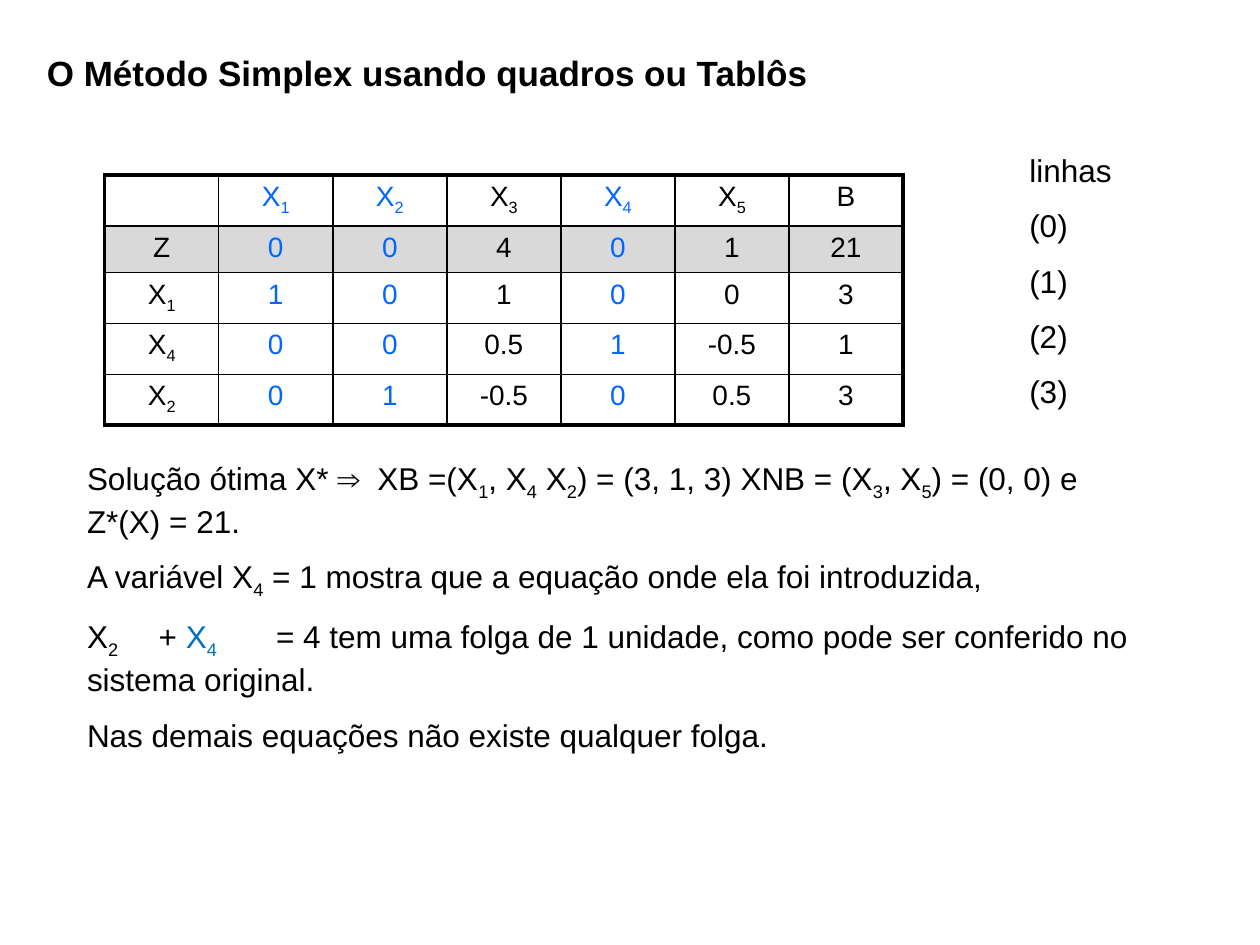
import pptx
import pptx.dml.color
import pptx.enum.text
import pptx.oxml.ns
import pptx.util
from lxml import etree
from typing import NamedTuple

Cm = pptx.util.Cm
Pt = pptx.util.Pt
FONT = "Arial"
BLACK, BLUE, BASIC_BLUE, GREY = "000000", "0070C0", "0066FF", "D9D9D9"
THIN, THICK = 1, 2.25
LEFT = pptx.enum.text.PP_ALIGN.LEFT
CENTER = pptx.enum.text.PP_ALIGN.CENTER


class Span(NamedTuple):
    text: str
    color: str = BLACK
    subscript: bool = False


class Area(NamedTuple):
    """Left, top, width and height in centimetres."""
    left: float
    top: float
    width: float
    height: float


def color_of(value: str) -> pptx.dml.color.RGBColor:
    return pptx.dml.color.RGBColor.from_string(value)


def add_child(parent, tag: str, **attributes: str):
    child = etree.SubElement(parent, pptx.oxml.ns.qn(tag))
    for name, value in attributes.items():
        child.set(name, value)
    return child


def spans_of(markup: str, color: str = BLACK) -> list[Span]:
    """Split the markup so that the character after each underscore is a subscript."""
    first, *others = markup.split("_")
    spans = [Span(first, color)]
    for other in others:
        spans += [Span(other[0], color, True), Span(other[1:], color)]
    return [span for span in spans if span.text]


def write_paragraph(para, spans: list[Span], size: float, align=LEFT, bold: bool = False) -> None:
    para.alignment = align
    for part in spans:
        span = para.add_run()
        span.text = part.text
        span.font.name = FONT
        span.font.size = Pt(size)
        span.font.bold = bold
        span.font.color.rgb = color_of(part.color)
        if part.subscript:
            span._r.get_or_add_rPr().set("baseline", "-25000")


def write_box(box, area: Area, paragraphs: list[list[Span]], size: float, bold: bool = False) -> None:
    box.left, box.top, box.width, box.height = map(Cm, area)
    frame = box.text_frame
    frame.word_wrap = True
    frame.auto_size = pptx.enum.text.MSO_AUTO_SIZE.SHAPE_TO_FIT_TEXT
    frame.vertical_anchor = pptx.enum.text.MSO_ANCHOR.TOP
    for index, spans in enumerate(paragraphs):
        para = frame.add_paragraph() if index else frame.paragraphs[0]
        para.space_before = Pt(10)
        write_paragraph(para, spans, size, bold=bold)


def remove_bullet(para, tab_stops: tuple[float, ...]) -> None:
    properties = para._p.get_or_add_pPr()
    properties.set("marL", "0")
    properties.set("indent", "0")
    add_child(properties, "a:buNone")
    tabs = add_child(properties, "a:tabLst")
    for stop in tab_stops:
        add_child(tabs, "a:tab", pos=str(Cm(stop)), algn="l")


def set_borders(cell, widths: dict[str, float]) -> None:
    properties = cell._tc.get_or_add_tcPr()
    for side, width in widths.items():
        line = add_child(properties, f"a:ln{side}", w=str(Pt(width)))
        add_child(add_child(line, "a:solidFill"), "a:srgbClr", val=BLACK)


def add_tableau(page, left: float, top: float, column_width: float,
                row_heights: list[float], rows: list[list[str]]) -> None:
    """Draw the simplex tableau, with the columns of the basic variables in blue."""
    header = rows[0]
    basis = [row[0] for row in rows[2:]]
    last_row, last_column = len(rows) - 1, len(header) - 1
    table = page.shapes.add_table(
        len(rows), len(header), Cm(left), Cm(top),
        Cm(column_width * len(header)), Cm(sum(row_heights))).table
    table.first_row = table.horz_banding = False
    for column in table.columns:
        column.width = Cm(column_width)
    for r, (row, height) in enumerate(zip(rows, row_heights)):
        table.rows[r].height = Cm(height)
        for c, markup in enumerate(row):
            cell = table.cell(r, c)
            set_borders(cell, {
                "L": THICK if c == 0 else THIN,
                "R": THICK if c == last_column else THIN,
                "T": THICK if r == 0 else THIN,
                "B": THICK if r == last_row else THIN})
            if row[0] == "Z":
                cell.fill.solid()
                cell.fill.fore_color.rgb = color_of(GREY)
            else:
                cell.fill.background()
            color = BASIC_BLUE if header[c] in basis else BLACK
            write_paragraph(cell.text_frame.paragraphs[0], spans_of(markup, color), 16, CENTER)


TABLEAU = [
    ["", "X_1", "X_2", "X_3", "X_4", "X_5", "B"],
    ["Z", "0", "0", "4", "0", "1", "21"],
    ["X_1", "1", "0", "1", "0", "0", "3"],
    ["X_4", "0", "0", "0.5", "1", "-0.5", "1"],
    ["X_2", "0", "1", "-0.5", "0", "0.5", "3"],
]
ROW_LABELS = ["linhas", "(0)", "(1)", "(2)", "(3)"]
SOLUTION = [
    spans_of("Solução ótima X* ⇒  XB =(X_1, X_4 X_2) = (3, 1, 3) XNB = (X_3, X_5) = (0, 0) e Z*(X) = 21."),
    spans_of("A variável X_4 = 1 mostra que a equação onde ela foi introduzida,"),
    spans_of("X_2\t + ") + spans_of("X_4", BLUE)
    + spans_of("\t= 4 tem uma folga de 1 unidade, como pode ser conferido no sistema original."),
    spans_of("Nas demais equações não existe qualquer folga."),
]


def main() -> None:
    deck = pptx.Presentation()
    deck.slide_width, deck.slide_height = Cm(25.4), Cm(19.05)
    page = deck.slides.add_slide(deck.slide_layouts[1])

    write_box(page.shapes.title, Area(0.69, 0.91, 24, 1.1),
              [spans_of("O Método Simplex usando quadros ou Tablôs")], 20, bold=True)
    labels = page.shapes.add_textbox(0, 0, 0, 0)
    write_box(labels, Area(20.5, 2.92, 2.8, 5.61), [spans_of(label) for label in ROW_LABELS], 18)
    add_tableau(page, 2.11, 3.53, 2.3, [1.02, 0.94, 1.02, 1.02, 1.02], TABLEAU)

    body = page.placeholders[1]
    write_box(body, Area(1.5, 9.12, 21.8, 6), SOLUTION, 18)
    for para in body.text_frame.paragraphs:
        remove_bullet(para, tab_stops=(2.54, 5.48))

    deck.save("out.pptx")


if __name__ == "__main__":
    main()
